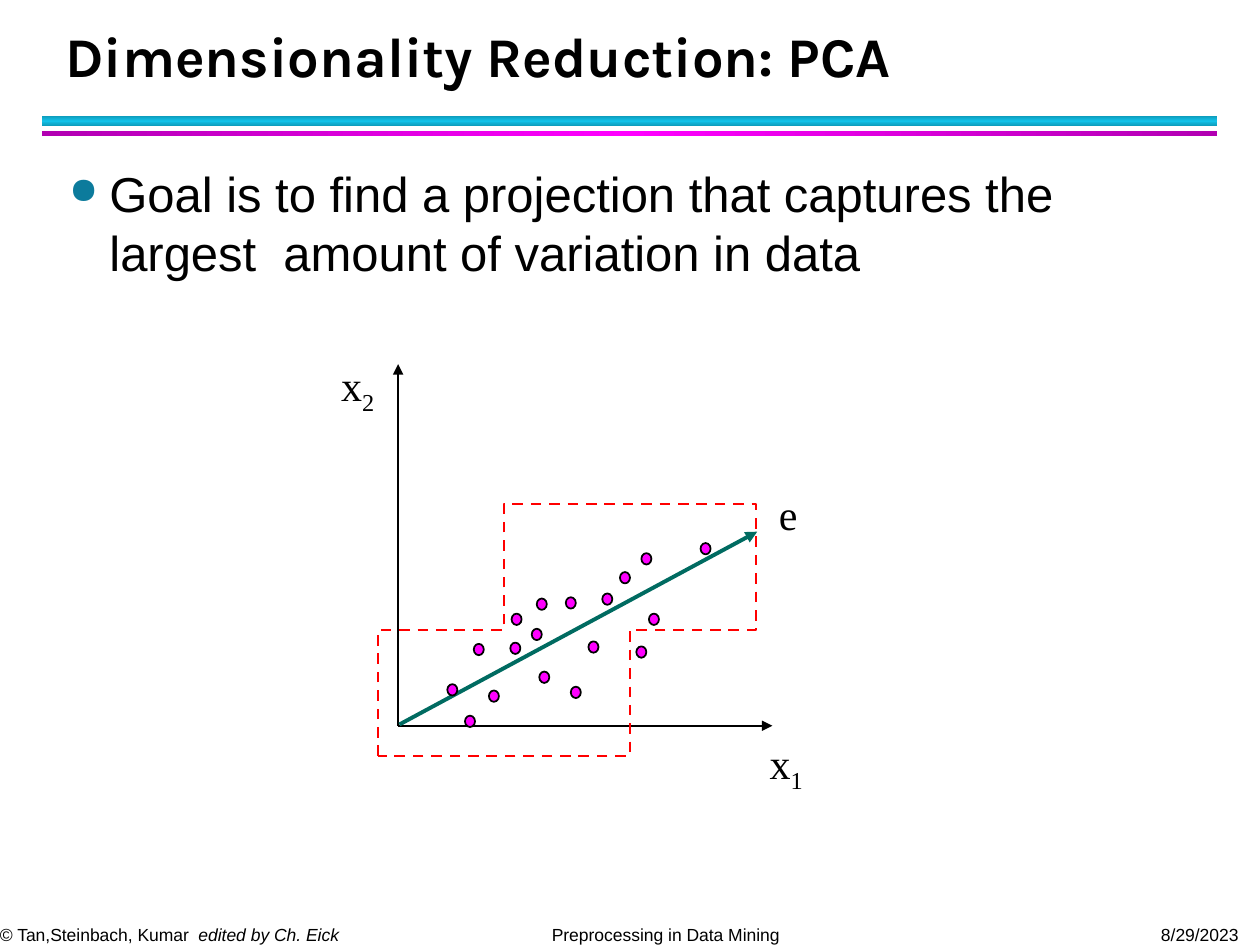
"""Build the PCA slide: title, goal, and a point cloud with its main direction."""
from copy import deepcopy

from lxml.etree import SubElement
from pptx import Presentation
from pptx.dml.color import RGBColor
from pptx.enum.dml import MSO_LINE
from pptx.enum.shapes import MSO_CONNECTOR, MSO_SHAPE
from pptx.enum.text import MSO_ANCHOR, PP_ALIGN
from pptx.oxml.ns import qn
from pptx.util import Inches, Pt

BLACK = RGBColor(0x00, 0x00, 0x00)
CYAN, CYAN_DARK = RGBColor(0x12, 0xC2, 0xE9), RGBColor(0x0E, 0x9B, 0xBA)
MAGENTA, MAGENTA_DARK = RGBColor(0xFF, 0x00, 0xFF), RGBColor(0xB2, 0x00, 0xB2)
GREEN = RGBColor(0x00, 0x6B, 0x61)
RED = RGBColor(0xFF, 0x00, 0x00)
BULLET = "0C7B9C"

TITLE = "Dimensionality Reduction: PCA"
GOAL = "Goal is to find a projection that captures the largest  amount of variation in data"
FOOTER = [("© Tan,Steinbach, Kumar  ", False), ("edited by Ch. Eick", True),
          ("\tPreprocessing in Data Mining", False), ("\t8/29/2023", False)]
FOOTER_TABS = [(4.38, "l"), (9.83, "r")]
RULES = [(0.92, 0.08, CYAN_DARK, CYAN, 90), (1.04, 0.04, MAGENTA_DARK, MAGENTA, 0)]
ARROWS = [((3.16, 5.76), (3.16, 2.89), BLACK, 1),
          ((3.16, 5.76), (6.13, 5.76), BLACK, 1),
          ((3.17, 5.75), (6.01, 4.22), GREEN, 2.25)]
LABELS = [("x", "2", 2.6, 2.83, 0.48), ("x", "1", 6, 5.83, 0.48), ("e", "", 6.08, 3.83, 0.35)]
DOT_WIDTH, DOT_HEIGHT = 0.08, 0.09
DOTS = [(3.76, 5.11), (4.06, 4.87), (3.55, 5.43), (4.22, 4.99), (4.05, 5.1), (4.67, 5.09),
        (4.53, 5.45), (4.28, 5.33), (4.49, 4.74), (5.15, 4.87), (5.56, 4.31), (3.88, 5.48),
        (4.78, 4.71), (5.09, 4.39), (4.26, 4.75), (4.92, 4.54), (5.05, 5.13), (3.69, 5.68)]
CLOUD_START = (3.35, 5.62)
CLOUD_CURVES = [((3.36, 5.45), (3.51, 5.08), (3.72, 4.88)),
                ((3.92, 4.68), (4.26, 4.53), (4.59, 4.42)),
                ((4.92, 4.31), (5.53, 4.18), (5.7, 4.22)),
                ((5.88, 4.25), (5.77, 4.43), (5.65, 4.64)),
                ((5.53, 4.84), (5.31, 5.24), (4.98, 5.45)),
                ((4.65, 5.65), (3.94, 5.86), (3.67, 5.89)),
                ((3.4, 5.93), (3.35, 5.79), CLOUD_START)]
CURVE_STEPS = 16


def add_text(slide, box, anchor, margins=(0.1, 0.05), wrap=True):
    frame = slide.shapes.add_textbox(*map(Inches, box)).text_frame
    frame.word_wrap = wrap
    frame.vertical_anchor = anchor
    frame.margin_left = frame.margin_right = Inches(margins[0])
    frame.margin_top = frame.margin_bottom = Inches(margins[1])
    return frame.paragraphs[0]


def add_run(paragraph, text, font, size, bold=False, italic=False):
    run = paragraph.add_run()
    run.text = text
    run.font.name, run.font.size = font, Pt(size)
    run.font.bold, run.font.italic = bold, italic
    run.font.color.rgb = BLACK
    return run


def add_rule(slide, top, height, edge, middle, angle):
    rule = slide.shapes.add_shape(MSO_SHAPE.RECTANGLE, *map(Inches, (0.33, top, 9.33, height)))
    rule.shadow.inherit = False
    rule.line.fill.background()
    rule.fill.gradient()
    rule.fill.gradient_angle = angle
    stops = rule.fill._xPr.find(qn("a:gradFill")).find(qn("a:gsLst"))
    stops.append(deepcopy(stops[0]))
    for stop, position, color in zip(rule.fill.gradient_stops, (0, 0.5, 1), (edge, middle, edge)):
        stop.position, stop.color.rgb = position, color


def add_arrow(slide, start, end, color, width):
    arrow = slide.shapes.add_connector(MSO_CONNECTOR.STRAIGHT, *map(Inches, start + end))
    arrow.line.color.rgb, arrow.line.width = color, Pt(width)
    SubElement(arrow.line._get_or_add_ln(), qn("a:tailEnd"), type="triangle")
    SubElement(arrow._element.spPr, qn("a:effectLst"))


def add_dot(slide, left, top):
    dot = slide.shapes.add_shape(MSO_SHAPE.OVAL, *map(Inches, (left, top, DOT_WIDTH, DOT_HEIGHT)))
    dot.shadow.inherit = False
    dot.fill.solid()
    dot.fill.fore_color.rgb = MAGENTA
    dot.line.color.rgb, dot.line.width = BLACK, Pt(1)


def curve_points(start, curves):
    for first, second, end in curves:
        for step in range(1, CURVE_STEPS + 1):
            t = step / CURVE_STEPS
            weights = ((1 - t) ** 3, 3 * t * (1 - t) ** 2, 3 * t * t * (1 - t), t ** 3)
            yield tuple(sum(w * v for w, v in zip(weights, axis))
                        for axis in zip(start, first, second, end))
        start = end


def add_cloud(slide):
    builder = slide.shapes.build_freeform(*CLOUD_START, scale=Inches(1))
    builder.add_line_segments(curve_points(CLOUD_START, CLOUD_CURVES), close=True)
    cloud = builder.convert_to_shape()
    cloud.shadow.inherit = False
    cloud.fill.background()
    cloud.line.color.rgb, cloud.line.width = RED, Pt(1.5)
    cloud.line.dash_style = MSO_LINE.DASH


def add_goal(slide):
    goal = add_text(slide, (0.45, 1.25, 9.1, 5.67), MSO_ANCHOR.TOP)
    goal.space_before, goal.space_after = Pt(3), Pt(4)
    properties = goal._p.get_or_add_pPr()
    properties.set("marL", str(Inches(0.32)))
    properties.set("indent", str(-Inches(0.32)))
    SubElement(SubElement(properties, qn("a:buClr")), qn("a:srgbClr"), val=BULLET)
    SubElement(properties, qn("a:buSzPct"), val="75000")
    SubElement(properties, qn("a:buChar"), char="●")
    add_run(goal, GOAL, "Arial", 28)


def add_footer(slide):
    footer = add_text(slide, (0, 7.26, 10, 0.24), MSO_ANCHOR.BOTTOM, (0, 0))
    footer.line_spacing = Pt(20)
    tabs = SubElement(footer._p.get_or_add_pPr(), qn("a:tabLst"))
    for position, side in FOOTER_TABS:
        SubElement(tabs, qn("a:tab"), pos=str(Inches(position)), algn=side)
    for text, italic in FOOTER:
        add_run(footer, text, "Arial", 10, italic=italic)


def add_label(slide, name, index, left, top, width):
    label = add_text(slide, (left, top, width, 0.5), MSO_ANCHOR.MIDDLE, wrap=False)
    label.alignment = PP_ALIGN.CENTER
    add_run(label, name, "Times New Roman", 24)
    if index:
        subscript = add_run(label, index, "Times New Roman", 24)
        subscript.font._element.set("baseline", "-25000")


def main():
    deck = Presentation()
    deck.slide_width, deck.slide_height = Inches(10), Inches(7.5)
    slide = deck.slides.add_slide(deck.slide_layouts[6])
    for rule in RULES:
        add_rule(slide, *rule)
    add_footer(slide)
    title = add_text(slide, (0.42, 0.17, 9.06, 0.58), MSO_ANCHOR.BOTTOM)
    title.line_spacing = Pt(36)
    add_run(title, TITLE, "Karla", 32, bold=True)
    add_goal(slide)
    for arrow in ARROWS:
        add_arrow(slide, *arrow)
    add_cloud(slide)
    for dot in DOTS:
        add_dot(slide, *dot)
    for label in LABELS:
        add_label(slide, *label)
    deck.save("out.pptx")


if __name__ == "__main__":
    main()
